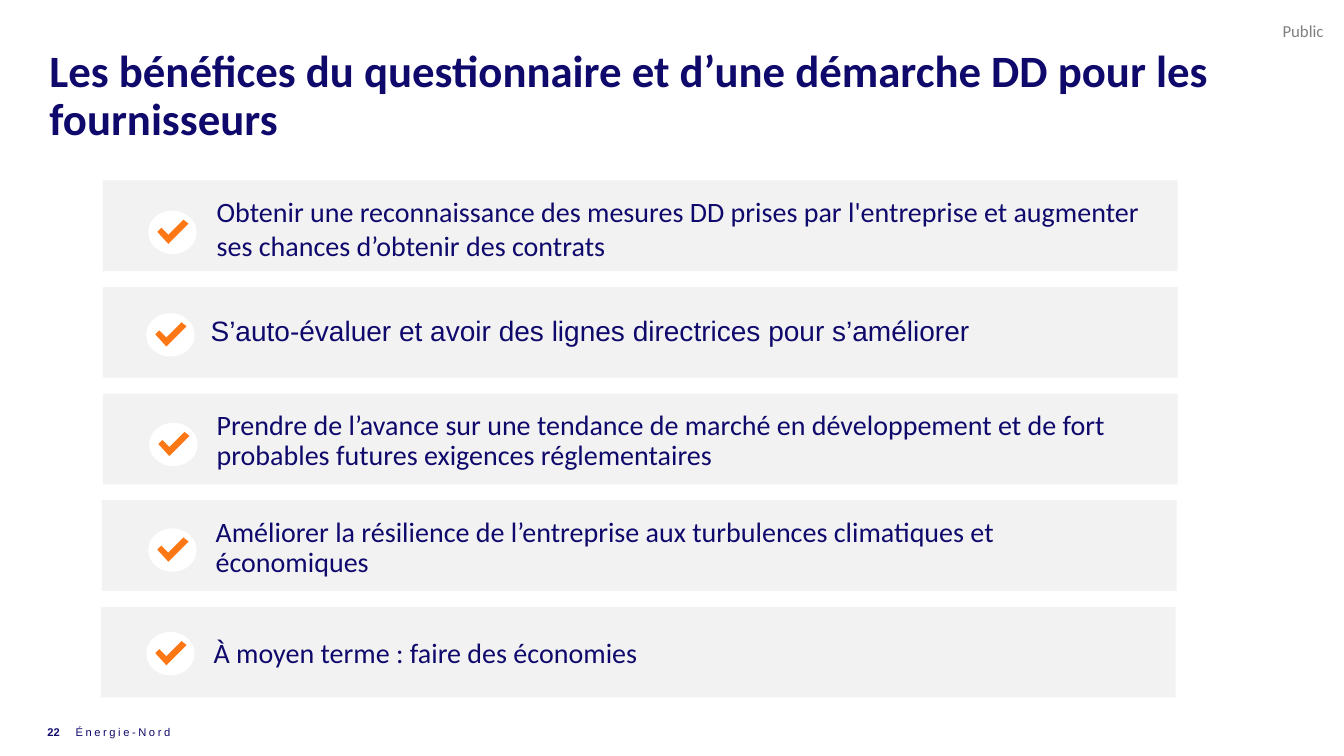
from collections import namedtuple
from dataclasses import dataclass

from pptx import Presentation
from pptx import util as u
from pptx.dml.color import RGBColor
from pptx.enum import shapes, text


@dataclass(frozen=True)
class Theme:
    navy: str = "0F096C"
    orange: str = "FD7714"
    band: str = "F2F2F2"
    white: str = "FFFFFF"
    grey: str = "7F7F7F"
    main_font: str = "Calibri"
    alt_font: str = "Arial"
    title_size: int = 32
    benefit_size: int = 20
    label_size: int = 12
    footer_size: int = 8


THEME = Theme()
Box = namedtuple("Box", "left top width height")
Benefit = namedtuple("Benefit", "wording left text_dx text_dy badge_dx badge_dy font spacing")

SLIDE = Box(0, 0, 13.33, 7.5)
TITLE = Box(0.49, 0.48, 12.39, 0.55)
LABEL = Box(12.72, 0.21, 0.45, 0.2)
FOOTER = Box(0.47, 7.14, 9.73, 0.24)
BANDS = Box(1.02, 1.79, 10.66, 5.13)
BAND_HEIGHT = 0.9
BADGE_SIZE = (0.48, 0.43)
# Corners of the check mark, measured from the badge's top left
CHECK = [(0.2, 0.33), (0.4, 0.13), (0.35, 0.09), (0.2, 0.24), (0.13, 0.17), (0.09, 0.21)]

BENEFITS = [
    Benefit("Obtenir une reconnaissance des mesures DD prises par l'entreprise et augmenter "
            "ses chances d’obtenir des contrats",
            0, 1.03, 0.06, 0.45, 0.3, THEME.main_font, 1.0),
    Benefit("S’auto-évaluer et avoir des lignes directrices pour s’améliorer",
            0, 0.97, 0.04, 0.43, 0.26, THEME.alt_font, 0.9),
    Benefit("Prendre de l’avance sur une tendance de marché en développement et de fort "
            "probables futures exigences réglementaires",
            0, 1.03, 0.06, 0.46, 0.29, THEME.main_font, 0.9),
    Benefit("Améliorer la résilience de l’entreprise aux turbulences climatiques et économiques",
            -0.01, 1.03, 0.06, 0.46, 0.28, THEME.main_font, 0.9),
    Benefit("À moyen terme : faire des économies",
            -0.02, 1.02, 0.06, 0.45, 0.25, THEME.main_font, 0.9),
]


def inches(box):
    return [u.Inches(length) for length in box]


def paint(shape, colour):
    shape.shadow.inherit = False
    shape.fill.solid()
    shape.fill.fore_color.rgb = RGBColor.from_string(colour)
    shape.line.fill.background()


def set_frame(frame, anchor, inset=True, wrap=True):
    frame.word_wrap = wrap
    frame.auto_size = text.MSO_AUTO_SIZE.NONE
    frame.vertical_anchor = anchor
    if not inset:
        frame.margin_left = frame.margin_right = frame.margin_top = frame.margin_bottom = 0


def add_run(paragraph, wording, size, font, colour=THEME.navy, bold=False):
    run = paragraph.add_run()
    run.text = wording
    run.font.size = u.Pt(size)
    run.font.name = font
    run.font.bold = bold
    run.font.color.rgb = RGBColor.from_string(colour)
    return run


def add_title(slide, box):
    title = slide.shapes.title
    title.left, title.top, title.width, title.height = inches(box)
    set_frame(title.text_frame, text.MSO_ANCHOR.TOP, inset=False)
    heading = title.text_frame.paragraphs[0]
    heading.alignment = text.PP_ALIGN.LEFT
    heading.line_spacing = 0.9
    add_run(heading, "Les bénéfices du questionnaire et d’une démarche DD pour les fournisseurs",
            THEME.title_size, THEME.main_font, bold=True)


def add_label(slide, box):
    label = slide.shapes.add_textbox(*inches(box)).text_frame
    set_frame(label, text.MSO_ANCHOR.TOP, inset=False, wrap=False)
    add_run(label.paragraphs[0], "Public", THEME.label_size, THEME.main_font, THEME.grey)


def add_footer(slide, box):
    number_width = 0.28
    parts = [
        ("22", Box(box.left, box.top, number_width, box.height), True, None),
        ("Énergie-Nord", Box(box.left + number_width, box.top,
                             box.width - number_width, box.height), False, 180),
    ]
    for wording, place, bold, tracking in parts:
        frame = slide.shapes.add_textbox(*inches(place)).text_frame
        set_frame(frame, text.MSO_ANCHOR.MIDDLE, inset=False)
        run = add_run(frame.paragraphs[0], wording, THEME.footer_size, THEME.alt_font, bold=bold)
        if tracking:
            run.font._element.set("spc", str(tracking))


def add_badge(slide, left, top):
    disc = slide.shapes.add_shape(shapes.MSO_SHAPE.OVAL, *inches((left, top, *BADGE_SIZE)))
    paint(disc, THEME.white)
    corners = [(u.Inches(left + dx), u.Inches(top + dy)) for dx, dy in CHECK]
    outline = slide.shapes.build_freeform(*corners[0])
    outline.add_line_segments(corners[1:], close=True)
    paint(outline.convert_to_shape(), THEME.orange)


def add_benefit(slide, box, benefit):
    # Grey band
    band = slide.shapes.add_shape(shapes.MSO_SHAPE.RECTANGLE, *inches(box))
    paint(band, THEME.band)
    # Wording
    place = Box(box.left + benefit.text_dx, box.top + benefit.text_dy, 9.42, 0.83)
    frame = slide.shapes.add_textbox(*inches(place)).text_frame
    set_frame(frame, text.MSO_ANCHOR.MIDDLE)
    frame.paragraphs[0].line_spacing = benefit.spacing
    add_run(frame.paragraphs[0], benefit.wording, THEME.benefit_size, benefit.font)
    # Check badge
    add_badge(slide, box.left + benefit.badge_dx, box.top + benefit.badge_dy)


def add_benefits(slide, box):
    pitch = (box.height - BAND_HEIGHT) / (len(BENEFITS) - 1)
    for row, benefit in enumerate(BENEFITS):
        place = Box(box.left + benefit.left, box.top + row * pitch, box.width, BAND_HEIGHT)
        add_benefit(slide, place, benefit)


def main():
    deck = Presentation()
    deck.slide_width, deck.slide_height = u.Inches(SLIDE.width), u.Inches(SLIDE.height)
    slide = deck.slides.add_slide(deck.slide_layouts.get_by_name("Title Only"))
    add_footer(slide, FOOTER)
    add_label(slide, LABEL)
    add_title(slide, TITLE)
    add_benefits(slide, BANDS)
    deck.save("out.pptx")


if __name__ == "__main__":
    main()
